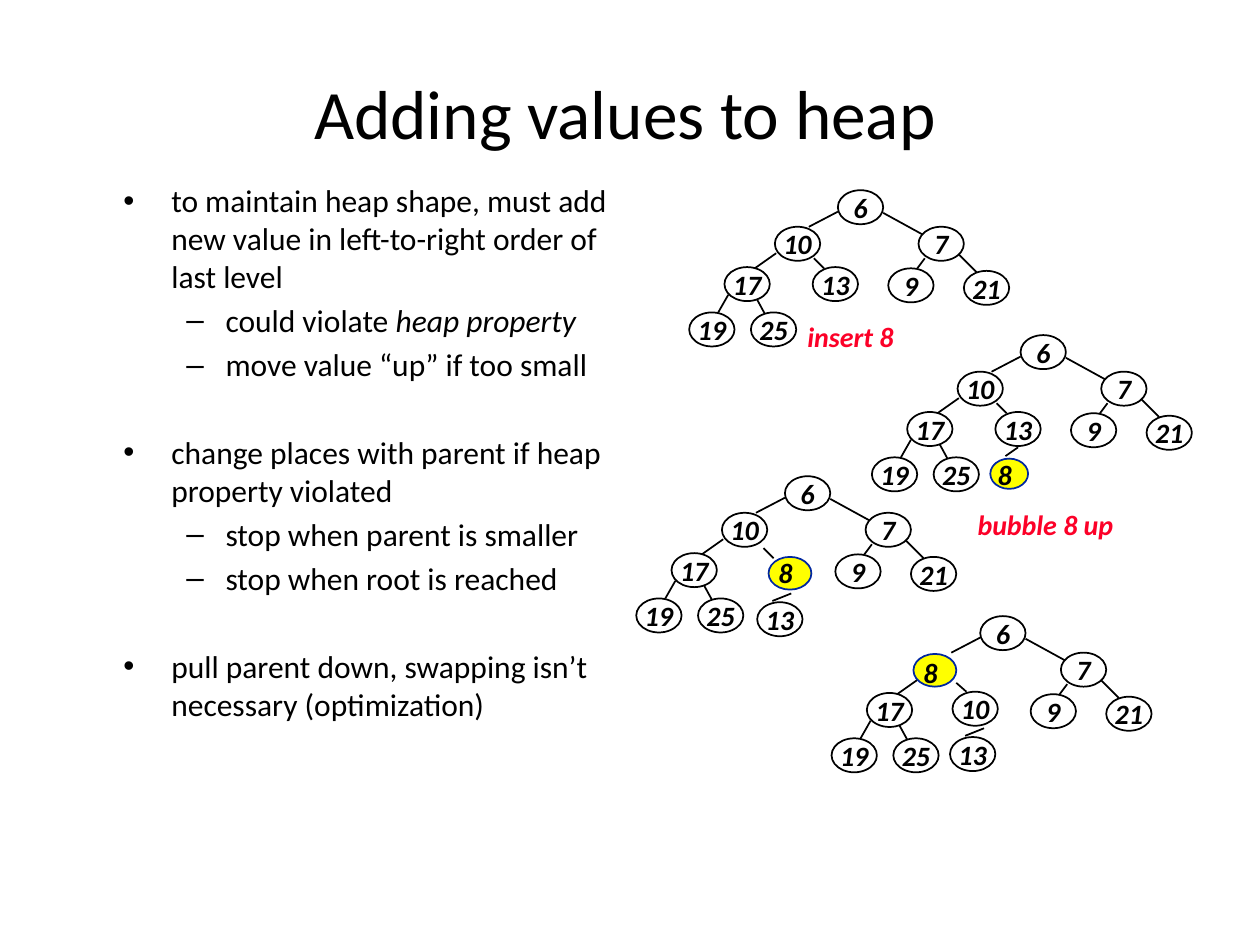
from dataclasses import dataclass, field
from typing import NamedTuple

from lxml import etree
from pptx import Presentation
from pptx import util as u
from pptx.dml import color
from pptx.enum import shapes, text
from pptx.oxml import ns


@dataclass(frozen=True)
class Theme:
    font: str = "Calibri"
    ink: str = "000000"
    accent: str = "FC0128"
    mark_fill: str = "FFFF00"
    mark_line: str = "00279F"
    title_size: float = 39.6
    body_size: float = 18
    node_size: float = 16
    line_width: float = 1


THEME = Theme()
COLUMNS, ROWS = 100, 75  # the slide as a grid of square cells
CELL = u.Inches(0.1)


class Point(NamedTuple):
    x: float
    y: float


class Edge(NamedTuple):
    start: Point
    end: Point


class Size(NamedTuple):
    width: float
    height: float


class Mark(NamedTuple):
    """A highlighted value: its oval and the corner of its text."""
    at: Point
    size: Size
    text_at: Point


class Item(NamedTuple):
    level: int
    words: str
    emphasis: str = ""
    new_group: bool = False


class Label(NamedTuple):
    words: str
    at: Point
    width: float


@dataclass(frozen=True)
class Heap:
    """A tree whose parts are placed relative to its root."""
    root: Point
    nodes: dict[str, Point]
    edges: list[Edge] = field(default_factory=list)
    mark: Mark | None = None


NODE = Size(3.6, 2.7)
MARK = Size(3.4, 2.6)
LABEL_HEIGHT = 3.6

# Parts that all four heaps share
SHARED_NODES = {
    "6": Point(0, 0), "7": Point(6.4, 2.9), "17": Point(-9, 6.1),
    "9": Point(4, 6.2), "21": Point(10, 6.4),
    "19": Point(-11.8, 9.7), "25": Point(-6.9, 9.7),
}
SHARED_EDGES = [
    Edge(Point(0, 1.7), Point(-2.3, 2.9)),
    Edge(Point(-4.9, 5), Point(-6.6, 6.2)),
    Edge(Point(-8.7, 8.3), Point(-9.5, 9.7)),
    Edge(Point(-6.4, 8.7), Point(-5.8, 9.8)),
    Edge(Point(3.6, 1.8), Point(6.7, 3.5)),
    Edge(Point(6.9, 5.4), Point(6.3, 6.2)),
    Edge(Point(9.6, 5.1), Point(11, 6.5)),
]
LEFT_CHILD = Point(-5, 2.9)
INNER_CHILD = Point(-2, 6.1)
INNER_EDGE = Edge(Point(-1.9, 5.4), Point(-1.1, 6.2))

# The stages of the insertion
HEAPS = [
    Heap(Point(66.5, 15.1), {"10": LEFT_CHILD, "13": INNER_CHILD}, [INNER_EDGE]),
    Heap(Point(81, 26.6), {"10": LEFT_CHILD, "13": INNER_CHILD},
         [INNER_EDGE, Edge(Point(-0.2, 8.9), Point(-1.2, 9.6))],
         Mark(Point(-2.4, 9.8), Size(3, 2.4), Point(-2.8, 9.2))),
    Heap(Point(62.3, 37.8), {"10": LEFT_CHILD, "13": Point(-2.2, 10)},
         [Edge(Point(-1.7, 5.7), Point(-0.9, 6.5)),
          Edge(Point(0.5, 9.3), Point(-1, 9.9))],
         Mark(Point(-1.3, 6.4), MARK, Point(-1.5, 5.8))),
    Heap(Point(77.8, 48.9), {"10": Point(-2.2, 6), "13": Point(-2.4, 9.6)},
         [Edge(Point(-1.9, 5.3), Point(-1.1, 6)),
          Edge(Point(0.3, 8.9), Point(-1.2, 9.5))],
         Mark(Point(-5.3, 3), MARK, Point(-5.5, 2.6))),
]
LABELS = [Label("insert 8", Point(63.1, 24.9), 14.3),
          Label("bubble 8 up", Point(76.6, 39.8), 21.9)]
ITEMS = [
    Item(0, "to maintain heap shape, must add new value in left-to-right order of last level"),
    Item(1, "could violate ", emphasis="heap property"),
    Item(1, "move value “up” if too small"),
    Item(0, "change places with parent if heap property violated", new_group=True),
    Item(1, "stop when parent is smaller"),
    Item(1, "stop when root is reached"),
    Item(0, "pull parent down, swapping isn’t necessary (optimization)", new_group=True),
]
BULLETS = [("•", 3.8, -3.8), ("–", 8.1, -3.1)]  # sign, margin and indent by level


def cells(*counts: float) -> list[int]:
    return [round(count * CELL) for count in counts]


def shift(root: Point, offset: Point) -> Point:
    return Point(root.x + offset.x, root.y + offset.y)


def set_font(para, size: float, rgb: str, strong: bool = False) -> None:
    font = para.font
    font.name, font.size = THEME.font, u.Pt(size)
    font.color.rgb = color.RGBColor.from_string(rgb)
    if strong:
        font.bold = font.italic = True


def set_line(line, rgb: str) -> None:
    line.color.rgb = color.RGBColor.from_string(rgb)
    line.width = u.Pt(THEME.line_width)


def place(holder, left: float, top: float, width: float, height: float) -> None:
    holder.left, holder.top, holder.width, holder.height = cells(left, top, width, height)
    holder.text_frame.auto_size = text.MSO_AUTO_SIZE.NONE


def draw_oval(page, at: Point, size: Size, rgb: str):
    oval = page.shapes.add_shape(shapes.MSO_SHAPE.OVAL, *cells(*at, *size))
    oval.shadow.inherit = False
    oval.fill.background()
    set_line(oval.line, rgb)
    return oval


def draw_node(page, value: str, at: Point) -> None:
    frame = draw_oval(page, at, NODE, THEME.ink).text_frame
    frame.word_wrap = False
    frame.vertical_anchor = text.MSO_ANCHOR.MIDDLE
    para = frame.paragraphs[0]
    para.text, para.alignment = value, text.PP_ALIGN.CENTER
    set_font(para, THEME.node_size, THEME.ink, strong=True)


def draw_edge(page, start: Point, end: Point) -> None:
    edge = page.shapes.add_connector(shapes.MSO_CONNECTOR.STRAIGHT, *cells(*start, *end))
    set_line(edge.line, THEME.ink)
    etree.SubElement(edge.element.spPr, ns.qn("a:effectLst"))


def draw_text(page, label: Label, rgb: str, wrap: bool) -> None:
    box = page.shapes.add_textbox(*cells(*label.at, label.width, LABEL_HEIGHT))
    box.text_frame.word_wrap = wrap
    para = box.text_frame.paragraphs[0]
    para.text = label.words
    set_font(para, THEME.node_size, rgb, strong=True)


def draw_heap(page, heap: Heap) -> None:
    for start, end in SHARED_EDGES + heap.edges:
        draw_edge(page, shift(heap.root, start), shift(heap.root, end))
    for value, offset in (SHARED_NODES | heap.nodes).items():
        draw_node(page, value, shift(heap.root, offset))
    if heap.mark:
        oval = draw_oval(page, shift(heap.root, heap.mark.at), heap.mark.size, THEME.mark_line)
        oval.fill.solid()
        oval.fill.fore_color.rgb = color.RGBColor.from_string(THEME.mark_fill)
        draw_text(page, Label("8", shift(heap.root, heap.mark.text_at), 3.3), THEME.ink, False)


def write_item(para, item: Item) -> None:
    para.level = item.level
    para.space_before = u.Pt(28.6 if item.new_group else 3.6)
    para.add_run().text = item.words
    if item.emphasis:
        span = para.add_run()
        span.text, span.font.italic = item.emphasis, True
    set_font(para, THEME.body_size, THEME.ink)
    sign, margin, indent = BULLETS[item.level]
    props = para._p.get_or_add_pPr()
    for name, length in zip(("marL", "indent"), cells(margin, indent)):
        props.set(name, str(length))
    bullet = etree.Element(ns.qn("a:buChar"), char=sign)
    props.find(ns.qn("a:defRPr")).addprevious(bullet)


def main() -> None:
    deck = Presentation()
    deck.slide_width, deck.slide_height = COLUMNS * CELL, ROWS * CELL
    page = deck.slides.add_slide(deck.slide_layouts[1])

    # Title and list
    title, body = page.placeholders
    place(title, 8.3, 5, 82.6, 7.8)
    title.text_frame.vertical_anchor = text.MSO_ANCHOR.MIDDLE
    heading = title.text_frame.paragraphs[0]
    heading.text, heading.alignment = "Adding values to heap", text.PP_ALIGN.CENTER
    set_font(heading, THEME.title_size, THEME.ink)
    place(body, 8.8, 13.9, 42.8, 49.2)
    for index, item in enumerate(ITEMS):
        frame = body.text_frame
        write_item(frame.add_paragraph() if index else frame.paragraphs[0], item)

    # Heaps and their captions
    for heap in HEAPS:
        draw_heap(page, heap)
    for label in LABELS:
        draw_text(page, label, THEME.accent, True)
    deck.save("out.pptx")


if __name__ == "__main__":
    main()
